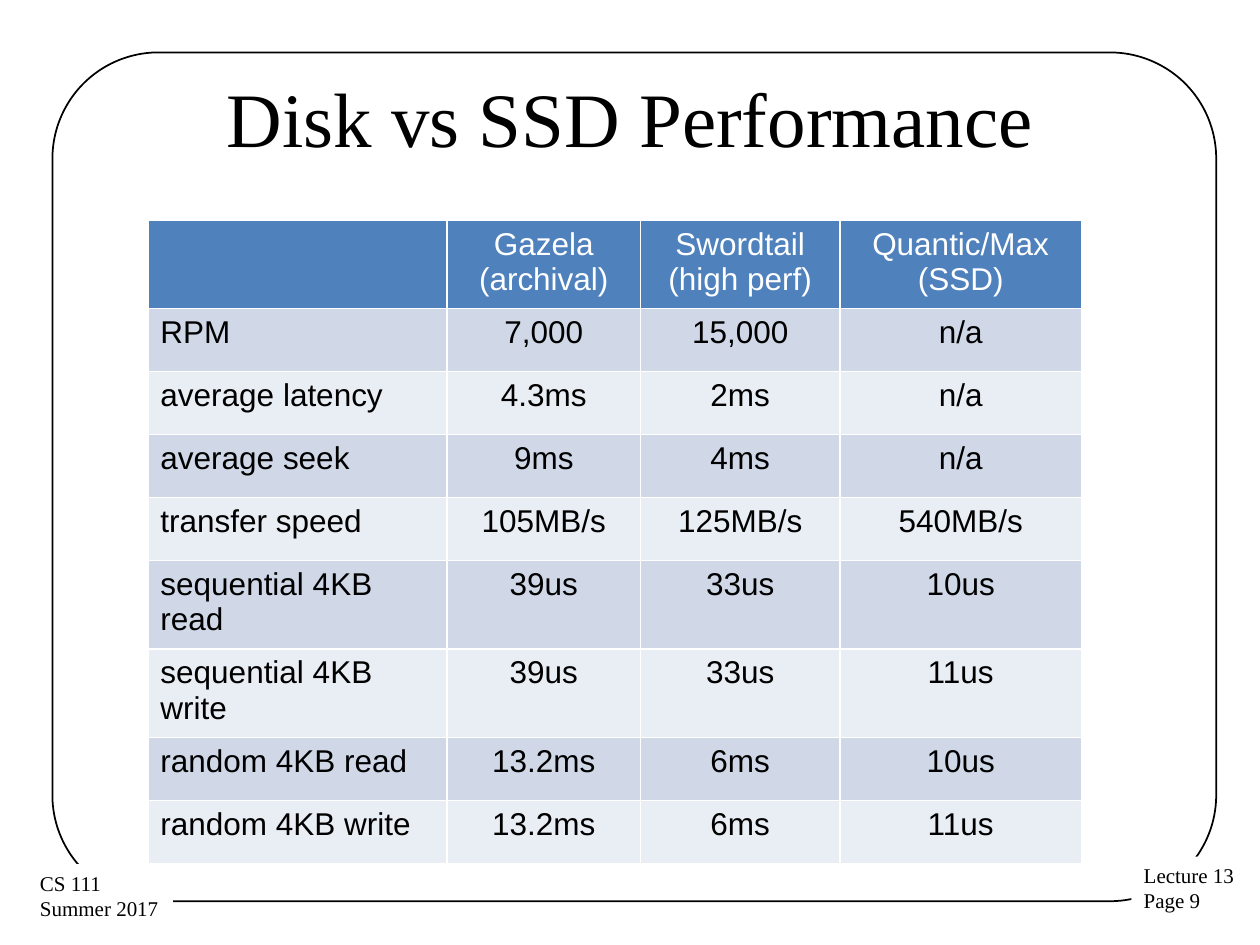
from pptx import Presentation
from pptx.dml.color import RGBColor as RGB
from pptx.enum.shapes import MSO_SHAPE as SHAPE
from pptx.enum.text import MSO_ANCHOR as ANCHOR, MSO_AUTO_SIZE as AUTO, PP_ALIGN as ALIGN
from pptx.util import Pt

TITLE = "Disk vs SSD Performance"
HEADER = ["", "Gazela\n(archival)", "Swordtail\n(high perf)", "Quantic/Max\n(SSD)"]
ROWS = [
    ["RPM", "7,000", "15,000", "n/a"],
    ["average latency", "4.3ms", "2ms", "n/a"],
    ["average seek", "9ms", "4ms", "n/a"],
    ["transfer speed", "105MB/s", "125MB/s", "540MB/s"],
    ["sequential 4KB read", "39us", "33us", "10us"],
    ["sequential 4KB write", "39us", "33us", "11us"],
    ["random 4KB read", "13.2ms", "6ms", "10us"],
    ["random 4KB write", "13.2ms", "6ms", "11us"],
]
# text, (left, top, width, height)
FOOTERS = [
    ("Lecture 13\nPage 9", (646.5, 489.5, 67, 37)),
    ("CS 111\nSummer 2017", (15.8, 493.8, 83, 37)),
]
FRAME = (30, 30, 665, 485)
TITLE_BOX = (36, 21.6, 648, 90)
TABLE_AT = (84.5, 126)
COL_WIDTHS = [171, 110.5, 114, 138]
ROW_HEIGHT = 36

BLACK, WHITE = RGB(0, 0, 0), RGB(255, 255, 255)
THEME = {
    "title": {"name": "Times New Roman", "size": Pt(44), "color": BLACK},
    "footer": {"name": "Times New Roman", "size": Pt(12), "color": BLACK},
    "header": {"name": "Arial", "size": Pt(18), "bold": False, "color": WHITE},
    "body": {"name": "Arial", "size": Pt(18), "color": BLACK},
    "header_fill": RGB(0x4F, 0x81, 0xBD),
    "bands": [RGB(0xD0, 0xD8, 0xE8), RGB(0xE9, 0xED, 0xF4)],
}


def write(tf, text, style, align):
    tf.text = text
    for p in tf.paragraphs:
        p.alignment = align
        for name, value in THEME[style].items():
            if name == "color":
                p.font.color.rgb = value
            else:
                setattr(p.font, name, value)
            for r in p.runs:
                if name == "color":
                    r.font.color.rgb = value
                else:
                    setattr(r.font, name, value)


def add_frame(slide):
    s = slide.shapes.add_shape(SHAPE.ROUNDED_RECTANGLE, *map(Pt, FRAME))
    s.adjustments[0] = 0.125
    s.shadow.inherit = False
    s.fill.background()
    s.line.color.rgb = BLACK
    s.line.width = Pt(1)


def add_footer(slide, text, box):
    s = slide.shapes.add_textbox(*map(Pt, box))
    s.fill.solid()
    s.fill.fore_color.rgb = WHITE
    s.text_frame.word_wrap = False
    s.text_frame.auto_size = AUTO.SHAPE_TO_FIT_TEXT
    write(s.text_frame, text, "footer", ALIGN.LEFT)


def set_title(slide):
    s = slide.shapes.title
    s.left, s.top, s.width, s.height = map(Pt, TITLE_BOX)
    s.text_frame.vertical_anchor = ANCHOR.MIDDLE
    write(s.text_frame, TITLE, "title", ALIGN.CENTER)


def add_results(slide):
    grid = [HEADER, *ROWS]
    size = (sum(COL_WIDTHS), ROW_HEIGHT * len(grid))
    table = slide.shapes.add_table(
        len(grid), len(HEADER), *map(Pt, TABLE_AT + size)).table
    for col, width in zip(table.columns, COL_WIDTHS):
        col.width = Pt(width)
    for i, row in enumerate(grid):
        table.rows[i].height = Pt(ROW_HEIGHT)
        for j, text in enumerate(row):
            cell = table.cell(i, j)
            cell.fill.solid()
            cell.fill.fore_color.rgb = THEME["bands"][(i - 1) % 2] if i else THEME["header_fill"]
            write(cell.text_frame, text, "body" if i else "header",
                  ALIGN.CENTER if j else ALIGN.LEFT)


def main():
    prs = Presentation()
    prs.slide_width, prs.slide_height = Pt(720), Pt(540)
    slide = prs.slides.add_slide(prs.slide_layouts[5])
    add_frame(slide)
    for text, box in FOOTERS:
        add_footer(slide, text, box)
    set_title(slide)
    add_results(slide)
    prs.save("out.pptx")


if __name__ == "__main__":
    main()
